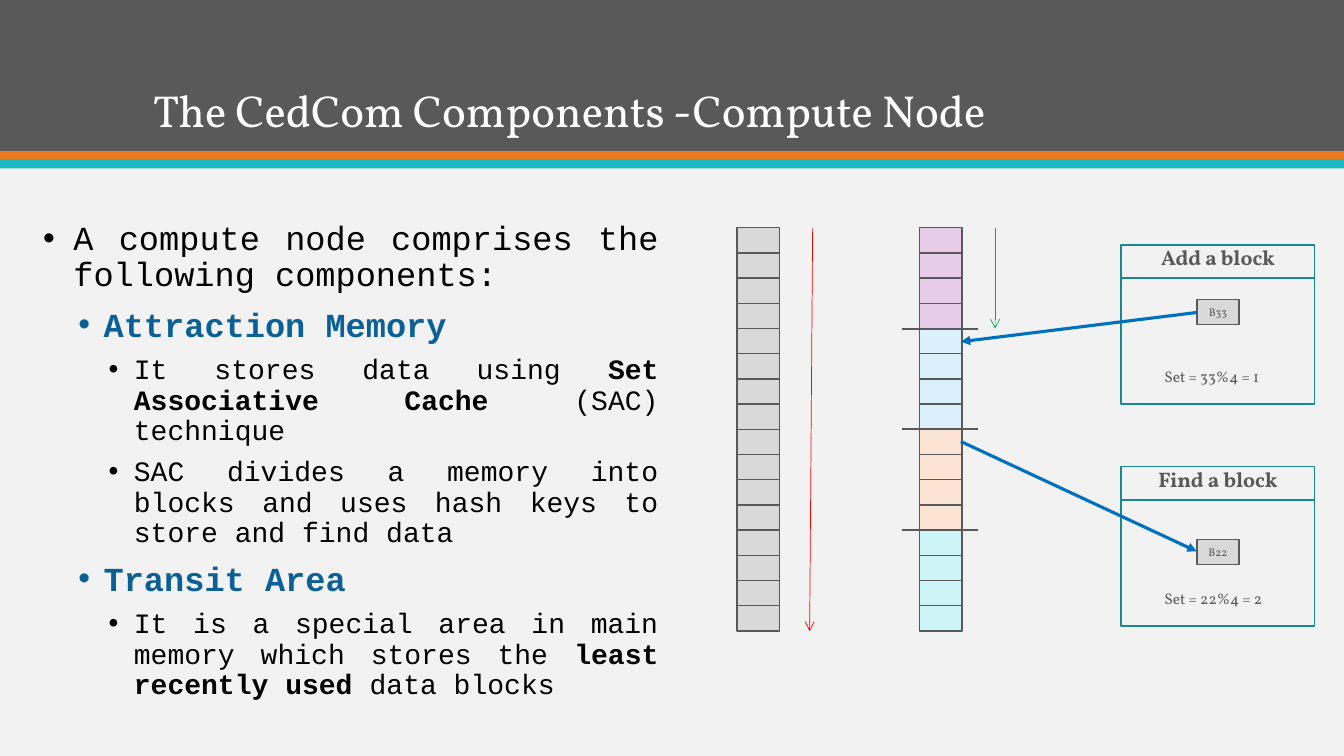
from lxml import etree
from pptx import Presentation
from pptx import util as u
from pptx.dml.color import RGBColor
from pptx.enum import shapes, text
from pptx.oxml import ns

GREY, TEAL, BLUE, BLACK, NAVY = "595959", "178A91", "0070C0", "000000", "0B6196"
CELL_W, CELL_H, TOP = 0.42, 0.25, 2.26
LEFT, CENTER, JUSTIFY = text.PP_ALIGN.LEFT, text.PP_ALIGN.CENTER, text.PP_ALIGN.JUSTIFY


def color(value):
    return RGBColor.from_string(value)


class Painter:
    serif = "Vollkorn"
    mono = "Courier New"

    def __init__(self, page):
        self.page = page

    def style(self, span, size, hue, bold=False, face=None):
        span.font.size = u.Pt(size)
        span.font.name = face or self.serif
        span.font.bold = bold
        span.font.color.rgb = color(hue)

    def rect(self, x, y, w, h, fill=None, line=None, label=None):
        box = self.page.shapes.add_shape(shapes.MSO_SHAPE.RECTANGLE, *map(u.Inches, (x, y, w, h)))
        box.shadow.inherit = False
        if fill:
            box.fill.solid()
            box.fill.fore_color.rgb = color(fill)
        else:
            box.fill.background()
        if line:
            box.line.color.rgb = color(line)
            box.line.width = u.Pt(1)
        else:
            box.line.fill.background()
        if label:
            frame = box.text_frame
            frame.text = label
            frame.margin_left = frame.margin_right = 0
            frame.vertical_anchor = text.MSO_ANCHOR.MIDDLE
            para = frame.paragraphs[0]
            para.alignment = CENTER
            self.style(para.runs[0], 8, GREY)

    def frame(self, x, y, w, h, wrap=True):
        box = self.page.shapes.add_textbox(*map(u.Inches, (x, y, w, h)))
        box.text_frame.word_wrap = wrap
        return box.text_frame

    def label(self, x, y, w, h, words, size, hue=GREY, bold=False, align=LEFT, wrap=True):
        frame = self.frame(x, y, w, h, wrap)
        frame.text = words
        para = frame.paragraphs[0]
        para.alignment = align
        self.style(para.runs[0], size, hue, bold)
        return frame

    def line(self, start, end, hue, width, head=None):
        link = self.page.shapes.add_connector(
            shapes.MSO_CONNECTOR.STRAIGHT, *map(u.Inches, (*start, *end)))
        link.line.color.rgb = color(hue)
        link.line.width = u.Pt(width)
        if head:
            etree.SubElement(link.line._get_or_add_ln(), ns.qn("a:tailEnd"), type=head)
        etree.SubElement(link._element.spPr, ns.qn("a:effectLst"))

    def bullet(self, para, level, spans):
        margin, hang, before, size, hue = [
            (0.3, 0.3, 18, 24, BLACK), (0.6, 0.25, 10, 24, NAVY), (0.9, 0.25, 8, 20, BLACK)][level]
        para.level = level
        para.alignment = JUSTIFY
        para.line_spacing = 0.9
        para.space_before = u.Pt(before)
        props = para._p.get_or_add_pPr()
        props.set("marL", str(u.Inches(margin)))
        props.set("indent", str(-u.Inches(hang)))
        etree.SubElement(props, ns.qn("a:buFont"), typeface="Arial")
        etree.SubElement(props, ns.qn("a:buChar"), char="•")
        for words, bold in spans:
            span = para.add_run()
            span.text = words
            self.style(span, size, hue, bold, self.mono)

    def column(self, x, fills):
        for row, fill in enumerate(fills):
            self.rect(x, TOP + row * CELL_H, CELL_W, CELL_H, fill, GREY)

    def panel(self, y, heading, block, block_y, formula):
        self.rect(11.87, block_y, CELL_W, CELL_H, "D9D9D9", GREY, block)
        self.label(11.45, y + 1.16, 1.25, 0.29, formula, 11, wrap=False)
        self.label(11.12, y - 0.05, 1.92, 0.35, heading, 15, bold=True, align=CENTER)
        self.rect(11.12, y, 1.92, 1.58, line=TEAL)
        self.line((11.12, y + 0.33), (13.03, y + 0.33), TEAL, 1.5)


def main():
    deck = Presentation()
    deck.slide_width, deck.slide_height = u.Inches(13.33), u.Inches(7.5)
    page = deck.slides.add_slide(deck.slide_layouts[6])
    page.background.fill.solid()
    page.background.fill.fore_color.rgb = color("F2F2F2")
    painter = Painter(page)

    for y, height, fill in [(0, 1.5, GREY), (1.5, 0.09, "EF7920"), (1.58, 0.09, "1EB8C1")]:
        painter.rect(0, y, 13.33, height, fill)
    title = painter.label(1.42, 0.28, 11.67, 1.13, "The CedCom Components -Compute Node", 32, "FFFFFF")
    title.vertical_anchor = text.MSO_ANCHOR.BOTTOM
    title.paragraphs[0].line_spacing = 0.9

    points = [
        (0, [("A compute node comprises the following components:", False)]),
        (1, [("Attraction Memory", True)]),
        (2, [("It stores data using ", False), ("Set Associative Cache", True),
             (" (SAC) technique", False)]),
        (2, [("SAC divides a memory into blocks and uses hash keys to store and find data", False)]),
        (1, [("Transit Area", True)]),
        (2, [("It is a special area in main memory which stores the ", False),
             ("least recently used", True), (" data blocks", False)]),
    ]
    body = painter.frame(0.33, 2.15, 6.3, 4.66)
    for index, (level, spans) in enumerate(points):
        para = body.add_paragraph() if index else body.paragraphs[0]
        painter.bullet(para, level, spans)

    set_fills = ["E6CCE6", "DCF0FC", "FCE4D2", "CDF5F7"]
    painter.column(7.31, ["D9D9D9"] * 16)
    painter.column(9.12, [fill for fill in set_fills for _ in range(4)])
    for border in range(1, 4):
        painter.line((8.95, TOP + border), (9.7, TOP + border), GREY, 1.5)

    painter.panel(2.43, "Add a block", "B33", 2.97, "Set = 33%4 = 1")
    painter.panel(4.63, "Find a block", "B22", 5.35, "Set = 22%4 = 2")
    painter.line((11.87, 3.1), (9.53, 3.39), BLUE, 2.25, "triangle")
    painter.line((9.53, 4.38), (11.87, 5.47), BLUE, 2.25, "triangle")
    painter.line((8.06, TOP), (8.03, TOP + 4), "FF0000", 0.5, "arrow")
    painter.line((9.87, TOP), (9.87, TOP + 1), "00B050", 0.5, "arrow")

    deck.save("out.pptx")


if __name__ == "__main__":
    main()
